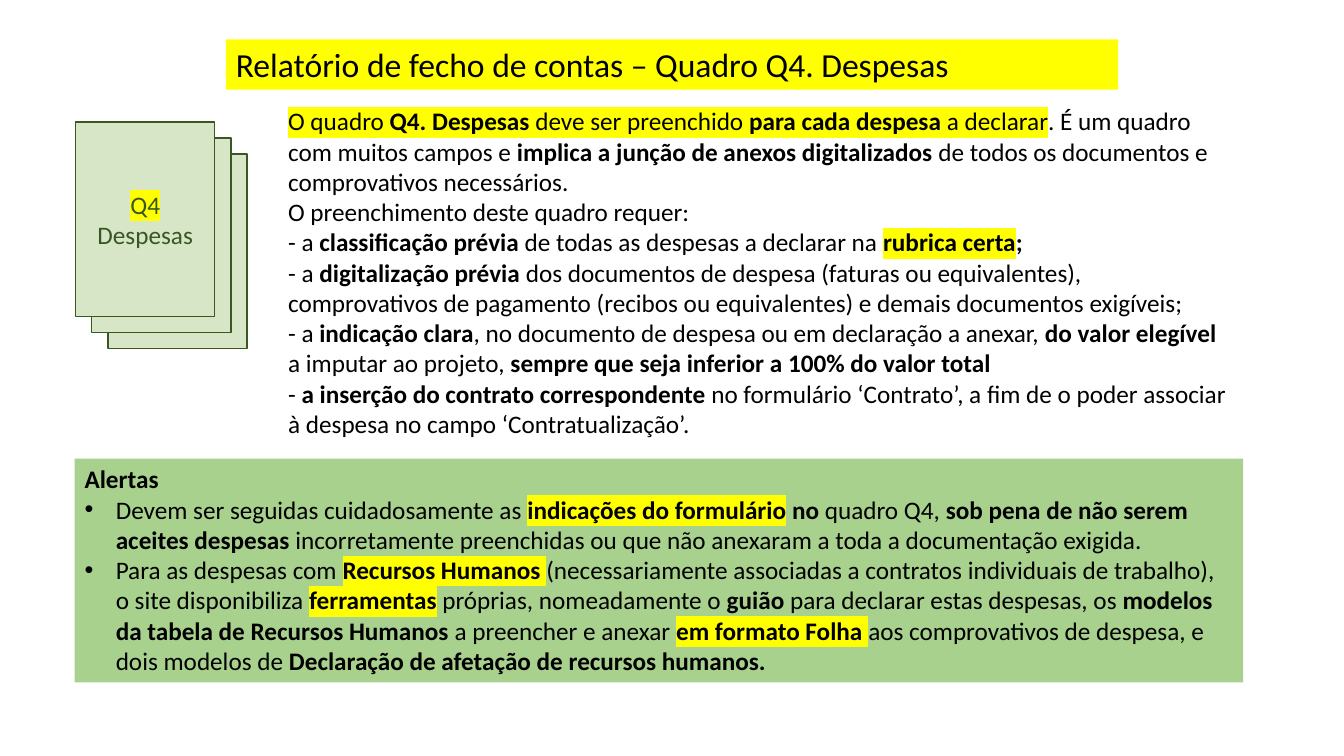
from lxml import etree
from pptx import Presentation
from pptx.dml.color import RGBColor
from pptx.enum.shapes import MSO_SHAPE
from pptx.enum.text import MSO_ANCHOR, PP_ALIGN
from pptx.oxml.ns import qn
from pptx.util import Inches, Pt

RECT = MSO_SHAPE.RECTANGLE
TOP, MIDDLE = MSO_ANCHOR.TOP, MSO_ANCHOR.MIDDLE
LEFT, CENTER = PP_ALIGN.LEFT, PP_ALIGN.CENTER
BOLD_TOGGLE, HIGHLIGHT_TOGGLE = "*", "|"

COLORS = {
    "text": "000000",
    "yellow": "FFFF00",
    "page": "D7E6C7",
    "dark_green": "385723",
    "alert": "A9D18E",
}

TITLE = "Relatório de fecho de contas – Quadro Q4. Despesas"

BODY = [
    "|O quadro *Q4. Despesas *deve ser preenchido *para cada despesa *a declarar|"
    ". É um quadro com muitos campos e *implica a junção de anexos digitalizados *"
    "de todos os documentos e comprovativos necessários.",
    "O preenchimento deste quadro requer:",
    "- a *classificação prévia* de todas as despesas a declarar na *|rubrica certa|;*",
    "- a *digitalização prévia *dos documentos de despesa (faturas ou equivalentes), "
    "comprovativos de pagamento (recibos ou equivalentes) e demais documentos exigíveis;",
    "- a* indicação clara*, no documento de despesa ou em declaração a anexar, "
    "*do valor elegível *a imputar ao projeto, "
    "*sempre que seja inferior a 100% do valor total*",
    "- *a inserção do contrato correspondente *no formulário ‘Contrato’, "
    "a fim de o poder associar à despesa no campo ‘Contratualização’.",
]

ALERTS = [
    "Devem ser seguidas cuidadosamente as *|indicações do formulário| no *quadro Q4, "
    "*sob pena de não serem aceites despesas *incorretamente preenchidas "
    "ou que não anexaram a toda a documentação exigida.",
    "Para as despesas com *|Recursos Humanos |*(necessariamente associadas a contratos "
    "individuais de trabalho), o site disponibiliza *|ferramentas|* próprias, "
    "nomeadamente o *guião* para declarar estas despesas, os "
    "*modelos da tabela de Recursos Humanos* a preencher e anexar "
    "*|em formato Folha |*aos comprovativos de despesa, e dois modelos de "
    "*Declaração de afetação de recursos humanos.*",
]


def rgb(name):
    return RGBColor.from_string(COLORS[name])


def add_run(p, text, size=18, color="text", bold=False, highlight=None, font="Calibri"):
    r = p.add_run()
    r.text = text
    r.font.size = Pt(size)
    r.font.bold = bold
    r.font.name = font
    r.font.color.rgb = rgb(color)
    if highlight:
        mark = etree.Element(qn("a:highlight"))
        etree.SubElement(mark, qn("a:srgbClr"), val=COLORS[highlight])
        r._r.rPr.find(qn("a:solidFill")).addnext(mark)


class Deck:
    def __init__(self, slide):
        self.shapes = slide.shapes

    def rect(self, x, y, w, h, fill, line=None):
        s = self.shapes.add_shape(RECT, Inches(x), Inches(y), Inches(w), Inches(h))
        s.shadow.inherit = False
        s.fill.solid()
        s.fill.fore_color.rgb = rgb(fill)
        if line:
            s.line.color.rgb = rgb(line)
            s.line.width = Pt(1)
        else:
            s.line.fill.background()
        return s

    def textbox(self, x, y, w, h):
        return self.shapes.add_textbox(Inches(x), Inches(y), Inches(w), Inches(h))

    def fill_text(self, s, lines, align=LEFT, anchor=TOP, bullets_from=None, **style):
        tf = s.text_frame
        tf.word_wrap = True
        tf.vertical_anchor = anchor
        for n, line in enumerate(lines):
            p = tf.paragraphs[0] if n == 0 else tf.add_paragraph()
            p.alignment = align
            if bullets_from is not None and n >= bullets_from:
                self.bullet(p)
            bold = False
            for i, zone in enumerate(line.split(HIGHLIGHT_TOGGLE)):
                for j, piece in enumerate(zone.split(BOLD_TOGGLE)):
                    if j:
                        bold = not bold
                    if piece:
                        mark = "yellow" if i % 2 else None
                        add_run(p, piece, bold=bold, highlight=mark, **style)

    def bullet(self, p, indent=0.31):
        pPr = p._p.get_or_add_pPr()
        pPr.set("marL", str(Inches(indent)))
        pPr.set("indent", str(-Inches(indent)))
        etree.SubElement(pPr, qn("a:buFont"), typeface="Arial")
        etree.SubElement(pPr, qn("a:buChar"), char="•")


def main():
    prs = Presentation()
    prs.slide_width, prs.slide_height = Inches(13.33), Inches(7.5)
    deck = Deck(prs.slides.add_slide(prs.slide_layouts[6]))

    deck.fill_text(deck.rect(2.24, 0.39, 8.85, 0.5, "yellow"), [TITLE], size=24)
    deck.fill_text(deck.textbox(2.76, 1, 9.57, 3.43), BODY)

    for step in (2, 1, 0):
        x, y = 0.75 + step * 0.16, 1.21 + step * 0.16
        page = deck.rect(x, y, 1.38, 1.93, "page", "dark_green")
    deck.fill_text(page, ["|Q4| Despesas"], align=CENTER, anchor=MIDDLE, color="dark_green")

    alerts = deck.rect(0.74, 4.55, 11.59, 2.22, "alert")
    deck.fill_text(alerts, ["*Alertas*"] + ALERTS, bullets_from=1)

    prs.save("out.pptx")


if __name__ == "__main__":
    main()
